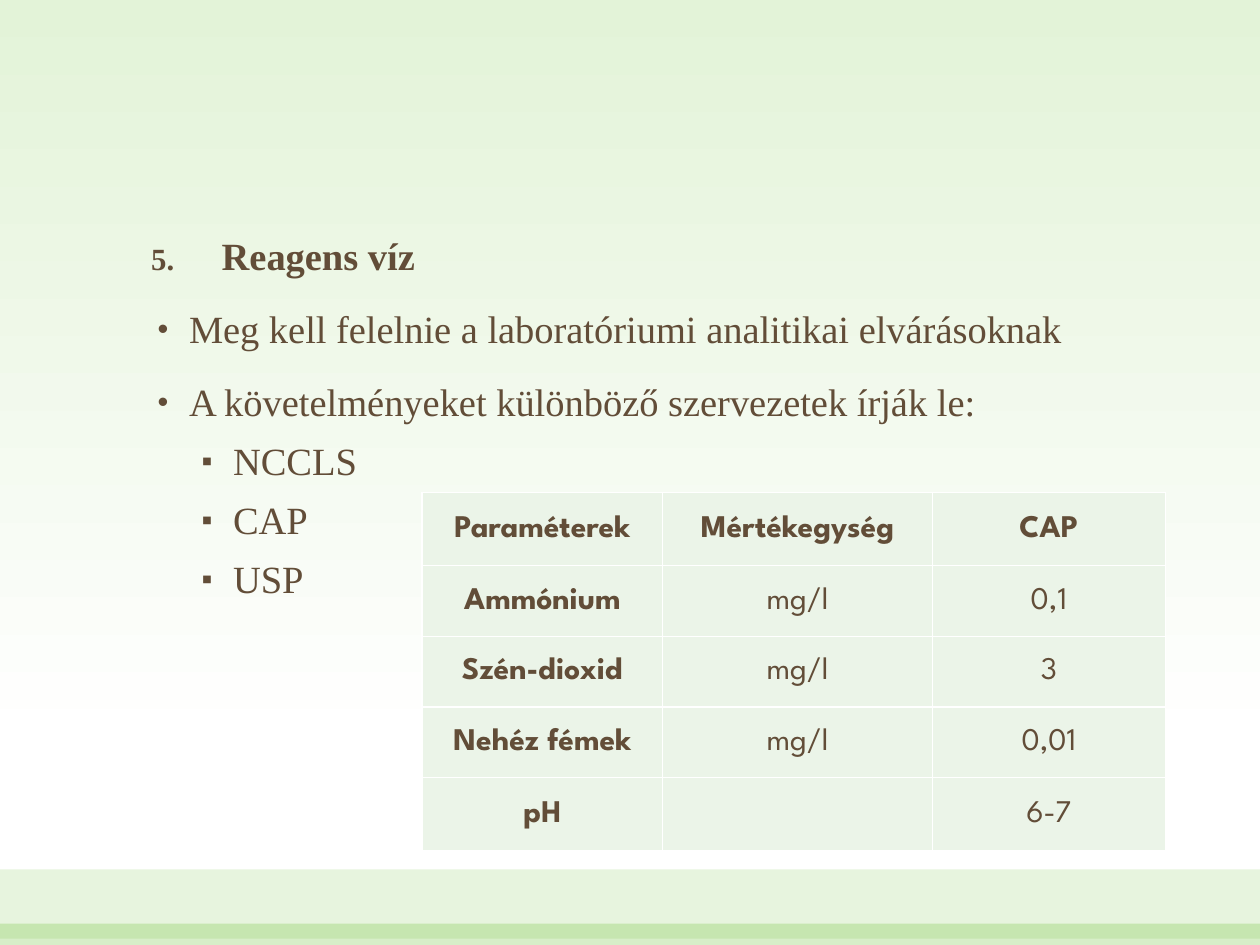
from pptx import Presentation
from pptx.dml.color import RGBColor
from pptx.enum import shapes, text
from pptx.oxml import parse_xml
from pptx.oxml.ns import nsdecls
from pptx.util import Inches, Pt

BROWN = RGBColor(0x62, 0x4D, 0x38)
GREEN = RGBColor(0x72, 0xC2, 0x3C)
PALE = RGBColor(0xE3, 0xF3, 0xD8)
MINT = RGBColor(0xEB, 0xF4, 0xE8)
WHITE = RGBColor(0xFF, 0xFF, 0xFF)

# Content
LINES = [
    ("num", "Reagens víz"),
    ("dot", "Meg kell felelnie a laboratóriumi analitikai elvárásoknak"),
    ("dot", "A követelményeket különböző szervezetek írják le:"),
    ("sub", "NCCLS"),
    ("sub", "CAP"),
    ("sub", "USP"),
]
ROWS = [
    ("Paraméterek", "Mértékegység", "CAP"),
    ("Ammónium", "mg/l", "0,1"),
    ("Szén-dioxid", "mg/l", "3"),
    ("Nehéz fémek", "mg/l", "0,01"),
    ("pH", "", "6-7"),
]
WIDTHS = (1.91, 2.14, 1.85)
HEIGHTS = (0.58, 0.56, 0.56, 0.56, 0.58)
BANDS = [(6.9, 0.55, 17), (7.33, 0.17, 28)]  # top, height, opacity %

# Line styles: level, left margin, hanging indent, space before, bullet
FONT = '<a:buFont {} typeface="Arial"/>'
STYLES = {
    "num": (0, 0.56, 0.56, 18, "<a:buFontTx {}/>",
            '<a:buAutoNum {} type="arabicPeriod" startAt="5"/>'),
    "dot": (0, 0.3, 0.25, 18, FONT, '<a:buChar {} char="•"/>'),
    "sub": (1, 0.65, 0.25, 10, FONT, '<a:buChar {} char="▪"/>'),
}


def add_xml(node, xml):
    node.append(parse_xml(xml.format(nsdecls("a"))))


def write(par, words, size=18, font="League Spartan", bold=False, align=None):
    par.alignment = align
    run = par.add_run()
    run.text = words
    run.font.size, run.font.name, run.font.bold = Pt(size), font, bold
    run.font.color.rgb = BROWN


def add_bullet(par, kind):
    level, left, hang, before, *marks = STYLES[kind]
    par.level = level
    par.line_spacing = 0.9
    par.space_before = Pt(before)
    props = par._p.get_or_add_pPr()
    props.set("marL", str(Inches(left)))
    props.set("indent", str(-Inches(hang)))
    for xml in ('<a:buSzPct {} val="80000"/>', *marks):
        add_xml(props, xml)


def style_cell(cell):
    cell.fill.solid()
    cell.fill.fore_color.rgb = MINT
    cell.vertical_anchor = text.MSO_ANCHOR.MIDDLE
    cell.margin_left = cell.margin_right = cell.margin_top = Inches(0.01)
    cell.margin_bottom = 0
    props = cell._tc.get_or_add_tcPr()
    for spot, side in enumerate(("lnL", "lnR", "lnT", "lnB")):
        line = parse_xml(
            f'<a:{side} {nsdecls("a")} w="12700"><a:solidFill>'
            f'<a:srgbClr val="{WHITE}"/></a:solidFill></a:{side}>')
        props.insert(spot, line)


def main():
    prs = Presentation()
    prs.slide_width, prs.slide_height = Inches(10), Inches(7.5)
    slide = prs.slides.add_slide(prs.slide_layouts[1])
    title = slide.shapes.title._element
    title.getparent().remove(title)

    # Background
    back = slide.background.fill
    back.gradient()
    back.gradient_angle = 270
    for stop, color, pos in zip(back.gradient_stops, (PALE, WHITE), (0, 0.79)):
        stop.color.rgb = color
        stop.position = pos

    # Bottom bands
    for top, high, alpha in BANDS:
        band = slide.shapes.add_shape(
            shapes.MSO_SHAPE.RECTANGLE, 0, Inches(top), Inches(10), Inches(high))
        band.shadow.inherit = False
        band.fill.solid()
        band.fill.fore_color.rgb = GREEN
        band.line.fill.background()
        tint = band._element.spPr.find(".//{*}srgbClr")
        add_xml(tint, f'<a:alpha {{}} val="{alpha * 1000}"/>')

    # Body list
    body = slide.placeholders[1]
    body.left, body.top = Inches(1.1), Inches(1.83)
    body.width, body.height = Inches(7.8), Inches(4.75)
    frame = body.text_frame
    frame.auto_size = text.MSO_AUTO_SIZE.NONE
    frame.vertical_anchor = text.MSO_ANCHOR.TOP
    for n, (kind, words) in enumerate(LINES):
        par = frame.add_paragraph() if n else frame.paragraphs[0]
        align = text.PP_ALIGN.JUSTIFY if kind == "dot" else text.PP_ALIGN.LEFT
        write(par, words, size=22, font="Times New Roman",
              bold=kind == "num", align=align)
        add_bullet(par, kind)

    # Parameter table
    table = slide.shapes.add_table(
        len(ROWS), len(WIDTHS), Inches(3.35), Inches(3.91),
        Inches(sum(WIDTHS)), Inches(sum(HEIGHTS))).table
    for col, wide in zip(table.columns, WIDTHS):
        col.width = Inches(wide)
    for r, (row, high) in enumerate(zip(ROWS, HEIGHTS)):
        table.rows[r].height = Inches(high)
        for c, words in enumerate(row):
            cell = table.cell(r, c)
            style_cell(cell)
            if words:
                write(cell.text_frame.paragraphs[0], words,
                      bold=r == 0 or c == 0, align=text.PP_ALIGN.CENTER)

    prs.save("out.pptx")


if __name__ == "__main__":
    main()
